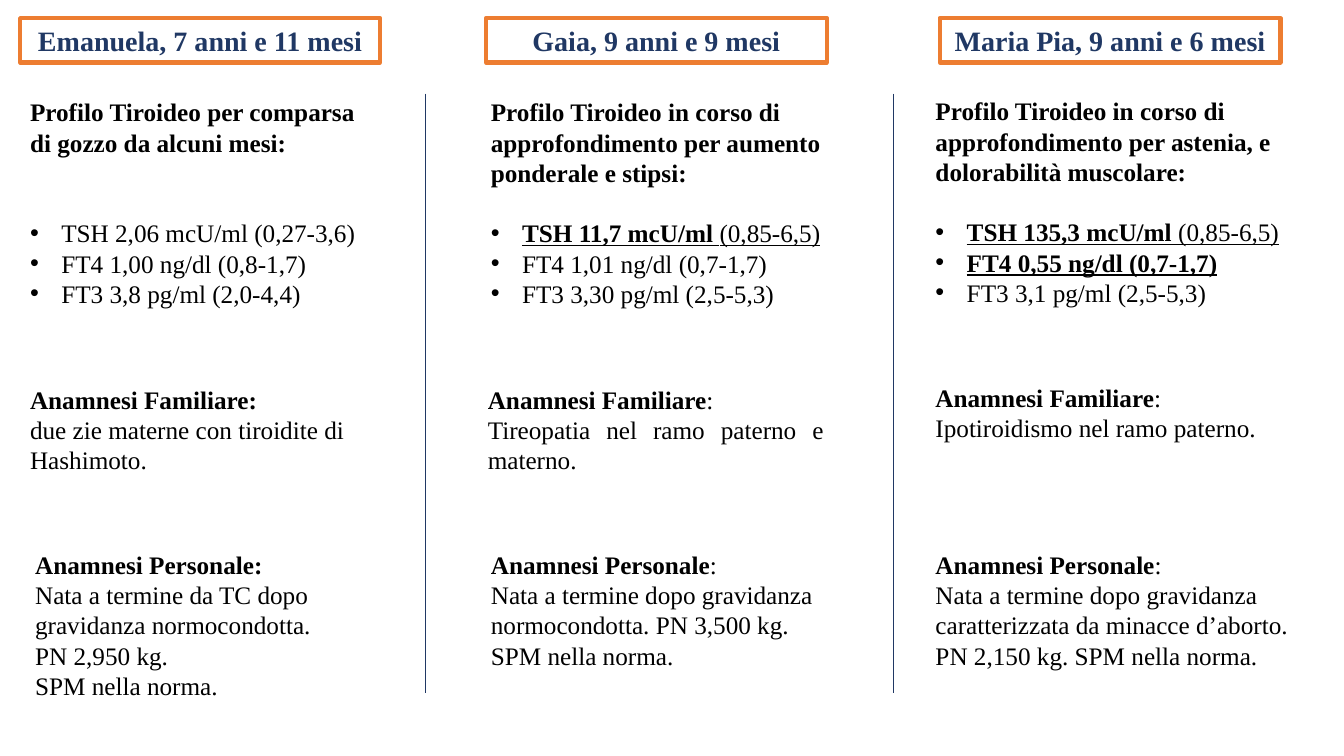
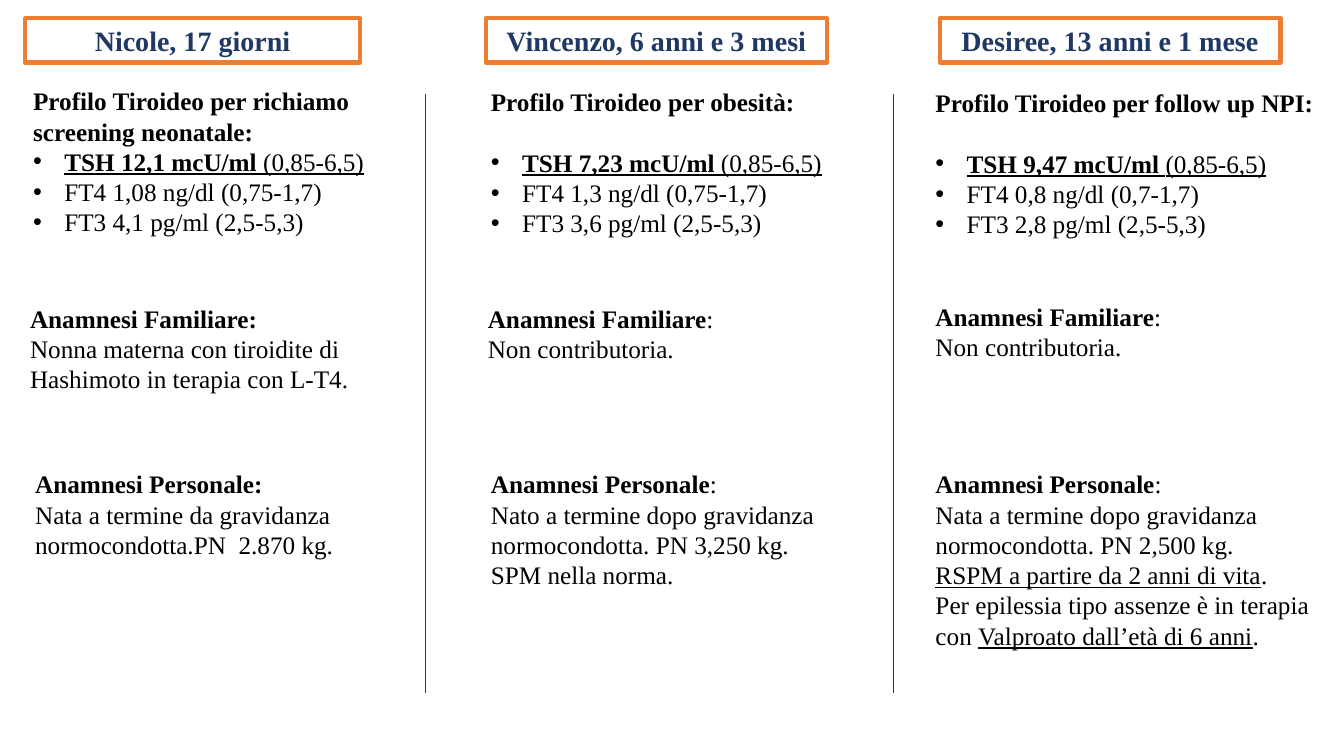
from lxml import etree
from pptx import Presentation
from pptx.dml.color import RGBColor
from pptx.enum.shapes import MSO_CONNECTOR, MSO_SHAPE
from pptx.enum.text import MSO_ANCHOR, MSO_AUTO_SIZE, PP_ALIGN
from pptx.oxml.ns import qn
from pptx.util import Inches, Pt

RECTANGLE = MSO_SHAPE.RECTANGLE
STRAIGHT = MSO_CONNECTOR.STRAIGHT
MIDDLE = MSO_ANCHOR.MIDDLE
GROW = MSO_AUTO_SIZE.SHAPE_TO_FIT_TEXT
LEFT, CENTER, JUSTIFY = PP_ALIGN.LEFT, PP_ALIGN.CENTER, PP_ALIGN.JUSTIFY

FONT = "Times New Roman"
BLACK, NAVY, ORANGE = "000000", "203864", "ED7D31"
TEXT_SIZE, TITLE_SIZE = 18, 20
LINE_GAP = 21.6
LINE_HEIGHT = 0.3
BULLET_INDENT = 0.31
DIVIDERS = (4.22, 8.86)
FAMILY_LEFTS = (0.2, 4.74, 9.18)
PERSONAL_LEFTS = (0.25, 4.77, 9.18)
FAMILY_WIDTHS = (3.57, 3.53, 3.53)
PERSONAL_WIDTHS = (3.57, 3.53, 3.91)
ALIGNMENTS = (LEFT, JUSTIFY, JUSTIFY)

CASES = [
    {
        "family_tops": (3.76, 3.76, 3.74),
        "personal_top": 5.4,
        "patients": [
            {
                "title": ("Emanuela, 7 anni e 11 mesi", 0.2, 3.57),
                "profile": ("Profilo Tiroideo per comparsa di gozzo da alcuni mesi:", 0.2, 0.91, 3.54),
                "gap_lines": 2,
                "values": [
                    [("TSH 2,06 mcU/ml (0,27-3,6)", "")],
                    [("FT4 1,00 ng/dl (0,8-1,7)", "")],
                    [("FT3 3,8 pg/ml (2,0-4,4)", "")],
                ],
                "family": (2, "due zie materne con tiroidite di Hashimoto."),
                "personal": (4, [
                    [("Nata a termine da TC dopo gravidanza normocondotta.", "")],
                    [("PN 2,950 kg.", "")],
                    [("SPM nella norma.", "")],
                ]),
            },
            {
                "title": ("Gaia, 9 anni e 9 mesi", 4.82, 3.38),
                "profile": ("Profilo Tiroideo in corso di approfondimento per aumento ponderale e stipsi:",
                            4.77, 0.91, 3.77),
                "gap_lines": 1,
                "values": [
                    [("TSH 11,7 mcU/ml ", "bu"), ("(0,85-6,5)", "u")],
                    [("FT4 1,01 ng/dl (0,7-1,7)", "")],
                    [("FT3 3,30 pg/ml (2,5-5,3)", "")],
                ],
                "family": (2, "Tireopatia nel ramo paterno e materno."),
                "personal": (3, [[
                    ("Nata a termine dopo gravidanza normocondotta. PN 3,500 kg. SPM nella norma.", ""),
                ]]),
            },
            {
                "title": ("Maria Pia, 9 anni e 6 mesi", 9.32, 3.38),
                "profile": ("Profilo Tiroideo in corso di approfondimento per astenia, e dolorabilità muscolare:",
                            9.18, 0.9, 3.72),
                "gap_lines": 1,
                "values": [
                    [("TSH 135,3 mcU/ml ", "bu"), ("(0,85-6,5)", "u")],
                    [("FT4 0,55 ng/dl (0,7-1,7)", "bu")],
                    [("FT3 3,1 pg/ml (2,5-5,3)", "")],
                ],
                "family": (1, "Ipotiroidismo nel ramo paterno."),
                "personal": (3, [[
                    ("Nata a termine dopo gravidanza caratterizzata da minacce d’aborto. "
                     "PN 2,150 kg. SPM nella norma.", ""),
                ]]),
            },
        ],
    },
    {
        "family_tops": (2.96, 2.96, 2.94),
        "personal_top": 4.6,
        "patients": [
            {
                "title": ("Nicole, 17 giorni", 0.25, 3.32),
                "profile": ("Profilo Tiroideo per richiamo screening neonatale:", 0.23, 0.8, 3.79),
                "gap_lines": 0,
                "values": [
                    [("TSH 12,1 mcU/ml ", "bu"), ("(0,85-6,5)", "u")],
                    [("FT4 1,08 ng/dl (0,75-1,7)", "")],
                    [("FT3 4,1 pg/ml (2,5-5,3)", "")],
                ],
                "family": (2, "Nonna materna con tiroidite di Hashimoto in terapia con L-T4."),
                "personal": (2, [[("Nata a termine da gravidanza normocondotta.PN  2.870 kg.", "")]]),
            },
            {
                "title": ("Vincenzo, 6 anni e 3 mesi", 4.82, 3.38),
                "profile": ("Profilo Tiroideo per obesità:", 4.77, 0.81, 3.48),
                "gap_lines": 1,
                "values": [
                    [("TSH 7,23 mcU/ml ", "bu"), ("(0,85-6,5)", "u")],
                    [("FT4 1,3 ng/dl (0,75-1,7)", "")],
                    [("FT3 3,6 pg/ml (2,5-5,3)", "")],
                ],
                "family": (1, "Non contributoria."),
                "personal": (3, [[
                    ("Nato a termine dopo gravidanza normocondotta. PN 3,250 kg. SPM nella norma.", ""),
                ]]),
            },
            {
                "title": ("Desiree, 13 anni e 1 mese", 9.32, 3.38),
                "profile": ("Profilo Tiroideo per follow up NPI:", 9.18, 0.82, 4.03),
                "gap_lines": 1,
                "values": [
                    [("TSH 9,47 mcU/ml ", "bu"), ("(0,85-6,5)", "u")],
                    [("FT4 0,8 ng/dl (0,7-1,7)", "")],
                    [("FT3 2,8 pg/ml (2,5-5,3)", "")],
                ],
                "family": (1, "Non contributoria."),
                "personal": (5, [
                    [("Nata a termine dopo gravidanza normocondotta. PN 2,500 kg.", "")],
                    [("RSPM a partire da 2 anni di vita", "u"), (".", "")],
                    [("Per epilessia tipo assenze è in terapia con ", ""),
                     ("Valproato dall’età di 6 anni", "u"), (".", "")],
                ]),
            },
        ],
    },
]


def color(value):
    return RGBColor.from_string(value)


class CaseDeck:
    """Holds the deck style and the current page, and draws each kind of element."""

    def __init__(self):
        self.deck = Presentation()
        self.deck.slide_width = Inches(13.33)
        self.deck.slide_height = Inches(7.5)
        self.page = None

    def new_page(self):
        self.page = self.deck.slides.add_slide(self.deck.slide_layouts[6])
        for left in DIVIDERS:
            self.divider(left)

    def divider(self, left):
        line = self.page.shapes.add_connector(
            STRAIGHT, Inches(left), Inches(0.93), Inches(left), Inches(6.88))
        line.line.color.rgb = color(NAVY)
        line.line.width = Pt(1)
        etree.SubElement(line._element.spPr, qn("a:effectLst"))

    def style_span(self, span, marks, size=TEXT_SIZE, ink=BLACK):
        span.font.name = FONT
        span.font.size = Pt(size)
        span.font.color.rgb = color(ink)
        span.font.bold = "b" in marks
        span.font.underline = "u" in marks

    def title(self, text, left, width):
        box = self.page.shapes.add_shape(
            RECTANGLE, Inches(left), Inches(0.18), Inches(width), Inches(0.44))
        box.shadow.inherit = False
        box.fill.background()
        box.line.color.rgb = color(ORANGE)
        box.line.width = Pt(3)
        etree.SubElement(box.line._get_or_add_ln(), qn("a:round"))
        frame = box.text_frame
        frame.word_wrap = True
        frame.vertical_anchor = MIDDLE
        frame.text = text
        para = frame.paragraphs[0]
        para.alignment = CENTER
        self.style_span(para.runs[0], "b", TITLE_SIZE, NAVY)

    def text_block(self, left, top, width, line_count, paragraphs, alignment=LEFT):
        height = 0.1 + line_count * LINE_HEIGHT
        box = self.page.shapes.add_textbox(
            Inches(left), Inches(top), Inches(width), Inches(height))
        frame = box.text_frame
        frame.word_wrap = True
        frame.auto_size = GROW
        for index, spans in enumerate(paragraphs):
            para = frame.add_paragraph() if index else frame.paragraphs[0]
            para.alignment = alignment
            for text, marks in spans:
                span = para.add_run()
                span.text = text
                self.style_span(span, marks)
        return frame.paragraphs

    def bullet(self, para):
        properties = para._p.get_or_add_pPr()
        properties.set("marL", str(Inches(BULLET_INDENT)))
        properties.set("indent", str(-Inches(BULLET_INDENT)))
        etree.SubElement(properties, qn("a:buFont"), typeface="Arial")
        etree.SubElement(properties, qn("a:buChar"), char="•")

    def profile(self, heading, left, top, width, values, gap_lines):
        line_count = 7 if top > 0.85 else 5
        paras = self.text_block(left, top, width, line_count, [[(heading, "b")]] + values)
        paras[1].space_before = Pt(gap_lines * LINE_GAP)
        for para in paras[1:]:
            self.bullet(para)

    def history(self, heading, column, left, top, width, line_count, paragraphs, alignment=LEFT):
        colon_marks = "" if column else "b"
        spans = [(heading, "b"), (":", colon_marks)]
        self.text_block(left, top, width, line_count + 1, [spans] + paragraphs, alignment)

    def patient(self, column, patient, family_top, personal_top):
        self.title(*patient["title"])
        self.profile(*patient["profile"], patient["values"], patient["gap_lines"])
        line_count, text = patient["family"]
        self.history("Anamnesi Familiare", column, FAMILY_LEFTS[column], family_top,
                     FAMILY_WIDTHS[column], line_count, [[(text, "")]], ALIGNMENTS[column])
        line_count, paragraphs = patient["personal"]
        self.history("Anamnesi Personale", column, PERSONAL_LEFTS[column], personal_top,
                     PERSONAL_WIDTHS[column], line_count, paragraphs)


def main():
    cases = CaseDeck()
    for group in CASES:
        cases.new_page()
        for column, patient in enumerate(group["patients"]):
            cases.patient(column, patient, group["family_tops"][column], group["personal_top"])
    cases.deck.save("out.pptx")


if __name__ == "__main__":
    main()
